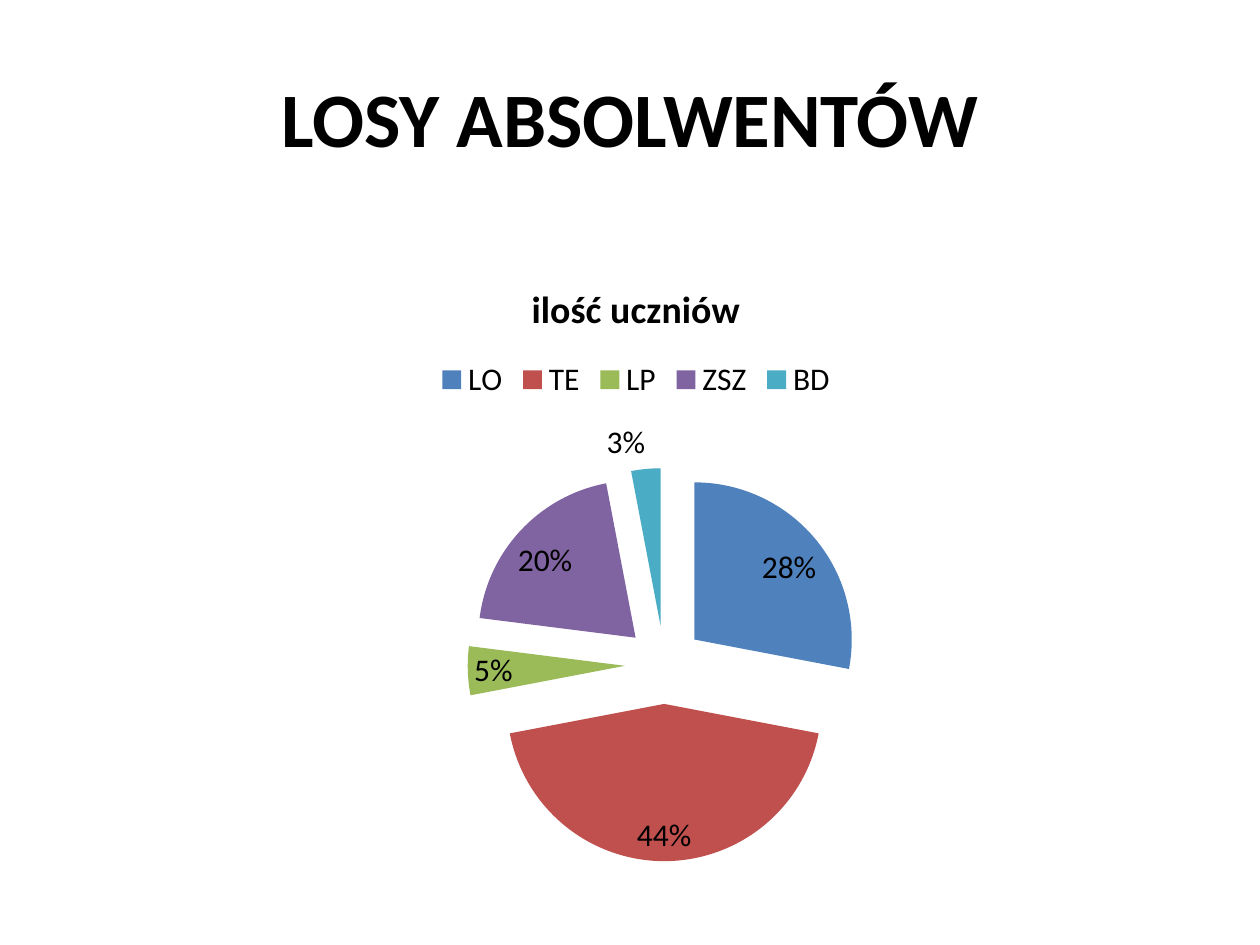
"""Build a slide with an exploded pie chart of where graduates continued."""
from lxml import etree
from pptx import Presentation
from pptx.chart.data import CategoryChartData
from pptx.dml.color import RGBColor
from pptx.enum.chart import XL_CHART_TYPE, XL_LABEL_POSITION, XL_LEGEND_POSITION
from pptx.enum.text import MSO_ANCHOR, PP_ALIGN
from pptx.oxml.ns import qn
from pptx.util import Pt

PIE = XL_CHART_TYPE.PIE
BEST_FIT = XL_LABEL_POSITION.BEST_FIT
TOP = XL_LEGEND_POSITION.TOP
MIDDLE = MSO_ANCHOR.MIDDLE
CENTER = PP_ALIGN.CENTER
PX = 914400 // 126
FONT = "Calibri"
BLACK = RGBColor(0x00, 0x00, 0x00)
BLUE = RGBColor(0x4F, 0x81, 0xBD)
RED = RGBColor(0xC0, 0x50, 0x4D)
GREEN = RGBColor(0x9B, 0xBB, 0x59)
PURPLE = RGBColor(0x80, 0x64, 0xA2)
TEAL = RGBColor(0x4B, 0xAC, 0xC6)
SCHOOLS = [("LO", 28, BLUE), ("TE", 44, RED), ("LP", 5, GREEN),
           ("ZSZ", 20, PURPLE), ("BD", 3, TEAL)]


def style_font(font, size, bold=False):
    font.name = FONT
    font.size = Pt(size)
    font.bold = bold
    font.color.rgb = BLACK


presentation = Presentation()
presentation.slide_width = 1260 * PX
presentation.slide_height = 945 * PX
slide = presentation.slides.add_slide(presentation.slide_layouts[6])

title_box = slide.shapes.add_textbox(63 * PX, 38 * PX, 1134 * PX, 158 * PX)
title_frame = title_box.text_frame
title_frame.word_wrap = True
title_frame.vertical_anchor = MIDDLE
paragraph = title_frame.paragraphs[0]
paragraph.text = "LOSY ABSOLWENTÓW"
paragraph.alignment = CENTER
style_font(paragraph.font, 44, bold=True)

chart_data = CategoryChartData()
chart_data.categories = [name for name, _, _ in SCHOOLS]
chart_data.add_series("ilość uczniów", [share for _, share, _ in SCHOOLS])
chart = slide.shapes.add_chart(
    PIE, 69 * PX, 256 * PX, 1134 * PX, 624 * PX, chart_data).chart
style_font(chart.font, 18)

chart.has_title = True
chart_title = chart.chart_title.text_frame.paragraphs[0]
chart_title.text = "ilość uczniów"
style_font(chart_title.font, 21.6, bold=True)

chart.has_legend = True
chart.legend.position = TOP
chart.legend.include_in_layout = False

plot = chart.plots[0]
plot.vary_by_categories = True
plot.has_data_labels = True
labels = plot.data_labels
labels.show_percentage = True
labels.show_value = False
labels.number_format = "0%"
labels.number_format_is_linked = False
labels.position = BEST_FIT
style_font(labels.font, 18)

series = plot.series[0]
for index, (_, _, color) in enumerate(SCHOOLS):
    fill = series.points[index].format.fill
    fill.solid()
    fill.fore_color.rgb = color

explosion = etree.Element(qn("c:explosion"), val="25")
series._element.find(qn("c:dPt")).addprevious(explosion)

plot_area = plot._element.getparent()
for old_layout in plot_area.findall(qn("c:layout")):
    plot_area.remove(old_layout)
layout = etree.Element(qn("c:layout"))
plot_area.insert(0, layout)
manual_layout = etree.SubElement(layout, qn("c:manualLayout"))
for tag, value in [("layoutTarget", "inner"), ("xMode", "edge"), ("yMode", "edge"),
                   ("x", "0.35"), ("y", "0.34"), ("w", "0.35"), ("h", "0.63")]:
    etree.SubElement(manual_layout, qn(f"c:{tag}"), val=value)

presentation.save("out.pptx")
